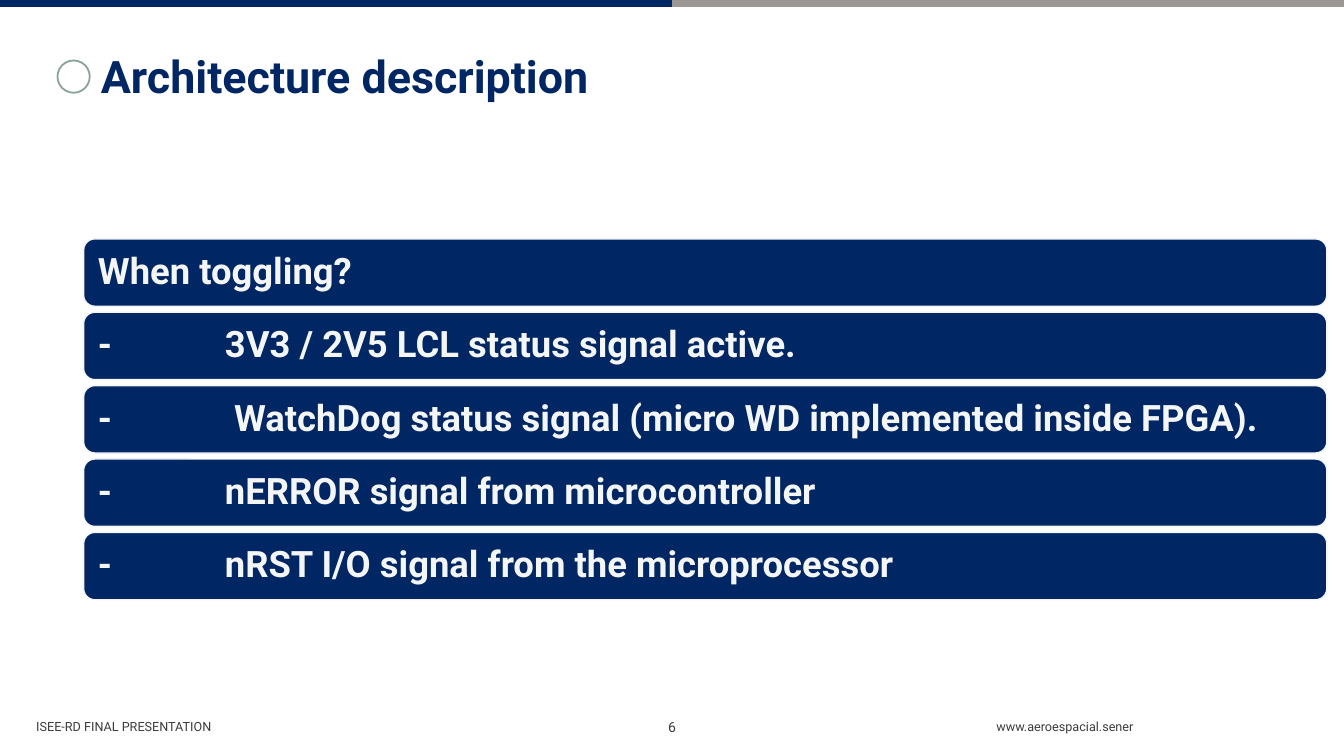
from dataclasses import dataclass

from lxml import etree
from pptx import Presentation
from pptx.dml.color import RGBColor
from pptx.enum.shapes import MSO_CONNECTOR, MSO_SHAPE
from pptx.enum.text import MSO_ANCHOR, PP_ALIGN
from pptx.oxml.ns import qn
from pptx.util import Inches, Pt

STRAIGHT = MSO_CONNECTOR.STRAIGHT
ROUNDED, OVAL = MSO_SHAPE.ROUNDED_RECTANGLE, MSO_SHAPE.OVAL
TOP, MIDDLE = MSO_ANCHOR.TOP, MSO_ANCHOR.MIDDLE
LEFT, CENTER, RIGHT = PP_ALIGN.LEFT, PP_ALIGN.CENTER, PP_ALIGN.RIGHT
WIDTH, HEIGHT = 13.33, 7.5


@dataclass(frozen=True)
class Theme:
    font: str = "Roboto"
    navy: RGBColor = RGBColor(0x00, 0x26, 0x64)
    taupe: RGBColor = RGBColor(0x9C, 0x97, 0x92)
    sage: RGBColor = RGBColor(0x89, 0x9F, 0x99)
    light: RGBColor = RGBColor(0xF4, 0xF6, 0xF6)
    charcoal: RGBColor = RGBColor(0x3C, 0x3C, 0x3B)
    title_size: float = 32
    bar_size: float = 26
    number_size: float = 10
    footer_size: float = 9
    strip_weight: float = 5.5


THEME = Theme()
SIGNALS = [
    "When toggling?",
    "-\t3V3 / 2V5 LCL status signal active.",
    "-\t WatchDog status signal (micro WD implemented inside FPGA).",
    "-\tnERROR signal from microcontroller",
    "-\tnRST I/O signal from the microprocessor",
]


def write_text(shape, text, size, color, bold=False, align=LEFT, anchor=TOP,
               inset=0, spacing=1.0, tab=None, wrap=True):
    frame = shape.text_frame
    frame.text = text
    frame.word_wrap = wrap
    frame.vertical_anchor = anchor
    frame.margin_left = frame.margin_right = Inches(inset)
    frame.margin_top = frame.margin_bottom = 0
    paragraph = frame.paragraphs[0]
    paragraph.alignment = align
    paragraph.line_spacing = spacing
    if tab:
        properties = paragraph._p.get_or_add_pPr()
        tabs = etree.SubElement(properties, qn("a:tabLst"))
        etree.SubElement(tabs, qn("a:tab"), pos=str(Inches(tab)), algn="l")
    font = paragraph.runs[0].font
    font.name, font.size, font.bold = THEME.font, Pt(size), bold
    font.color.rgb = color


def add_label(slide, box, text, size, color, **style):
    shape = slide.shapes.add_textbox(*map(Inches, box))
    write_text(shape, text, size, color, **style)


def add_top_strip(slide, box):
    left, top, width, height = box
    half = width / 2
    middle = Inches(top + height / 2)
    for column, color in enumerate((THEME.navy, THEME.taupe)):
        start = left + column * half
        line = slide.shapes.add_connector(
            STRAIGHT, Inches(start), middle, Inches(start + half), middle)
        line.line.color.rgb = color
        line.line.width = Pt(THEME.strip_weight)
        etree.SubElement(line._element.spPr, qn("a:effectLst"))


def add_header(slide, box):
    left, top, width, height = box
    mark = slide.shapes.add_shape(
        OVAL, *map(Inches, (left + 0.23, top + 0.12, 0.32, 0.32)))
    mark.shadow.inherit = False
    mark.fill.background()
    mark.line.color.rgb = THEME.sage
    mark.line.width = Pt(1.25)
    title_indent = 0.66
    add_label(slide, (left + title_indent, top, width - title_indent, height),
              "Architecture description", THEME.title_size, THEME.navy, bold=True)


def add_signal_bars(slide, box, signals):
    left, top, width, height = box
    gap = 0.06
    bar_height = (height - gap * (len(signals) - 1)) / len(signals)
    for row, signal in enumerate(signals):
        bar_top = top + row * (bar_height + gap)
        bar = slide.shapes.add_shape(
            ROUNDED, *map(Inches, (left, bar_top, width, bar_height)))
        bar.shadow.inherit = False
        bar.fill.solid()
        bar.fill.fore_color.rgb = THEME.navy
        bar.line.color.rgb = THEME.light
        bar.line.width = Pt(1)
        write_text(bar, signal, THEME.bar_size, THEME.light, bold=True,
                   anchor=MIDDLE, inset=0.11, spacing=0.9, tab=1.26)


def add_footer(slide, box):
    left, top, width, height = box
    number_width, address_width = 1.09, 1.39
    add_label(slide, (left, top, width / 2, height), "ISEE-RD FINAL PRESENTATION",
              THEME.footer_size, THEME.charcoal, anchor=MIDDLE)
    add_label(slide, ((WIDTH - number_width) / 2, top, number_width, height), "6",
              THEME.number_size, THEME.charcoal, align=CENTER, anchor=MIDDLE)
    add_label(slide, (left + width - address_width, top, address_width, height),
              "www.aeroespacial.sener", THEME.footer_size, THEME.charcoal,
              align=RIGHT, anchor=MIDDLE, wrap=False)


def main():
    presentation = Presentation()
    presentation.slide_width = Inches(WIDTH)
    presentation.slide_height = Inches(HEIGHT)
    slide = presentation.slides.add_slide(presentation.slide_layouts[6])
    add_top_strip(slide, (0, 0, WIDTH, 0.06))
    add_footer(slide, (0.36, 7.13, 10.88, 0.16))
    add_header(slide, (0.34, 0.48, 5.94, 0.55))
    add_signal_bars(slide, (0.83, 2.37, 12.33, 3.58), SIGNALS)
    presentation.save("out.pptx")


if __name__ == "__main__":
    main()
